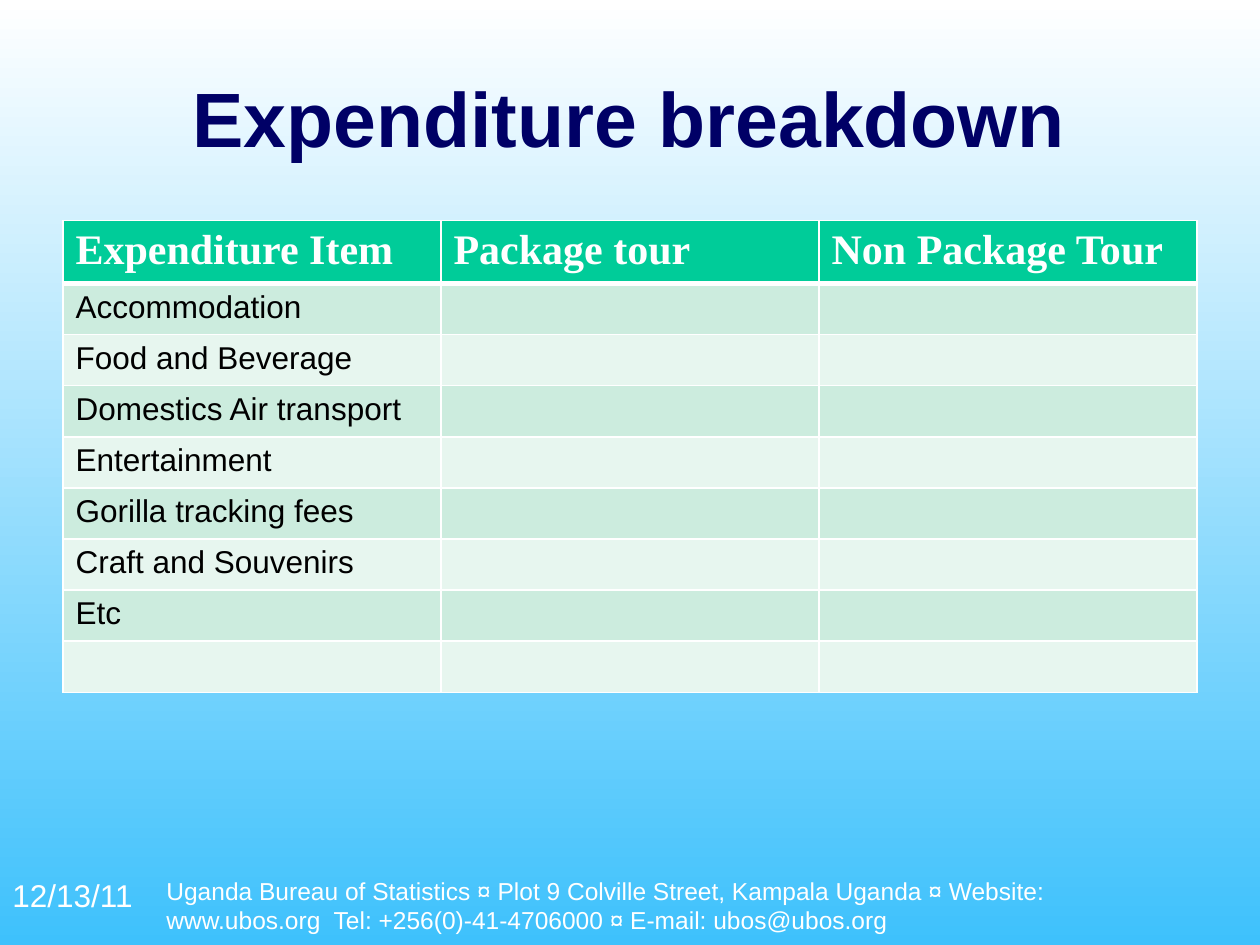
"""Build the expenditure breakdown slide with its table and footer."""
from lxml import etree
from pptx import Presentation
from pptx.dml.color import RGBColor
from pptx.enum.text import MSO_ANCHOR, MSO_AUTO_SIZE, PP_ALIGN
from pptx.oxml.ns import qn
from pptx.util import Pt

LEFT, CENTER = PP_ALIGN.LEFT, PP_ALIGN.CENTER
TOP, MIDDLE = MSO_ANCHOR.TOP, MSO_ANCHOR.MIDDLE
NO_AUTOFIT = MSO_AUTO_SIZE.NONE
TITLE_ONLY = 5

COLORS = {
    "white": "FFFFFF",
    "sky": "3EC1FC",
    "navy": "000066",
    "black": "000000",
    "header": "00CC99",
    "band_dark": "CCECDE",
    "band_light": "E7F6EF",
}
HEADINGS = ["Expenditure Item", "Package tour", "Non Package Tour"]
ITEMS = [
    "Accommodation",
    "Food and Beverage",
    "Domestics Air transport",
    "Entertainment",
    "Gorilla tracking fees",
    "Craft and Souvenirs",
    "Etc",
    "",
]
ADDRESS = (
    "Uganda Bureau of Statistics ¤ Plot 9 Colville Street, Kampala Uganda ¤ "
    "Website: www.ubos.org  Tel: +256(0)-41-4706000 ¤ E-mail: ubos@ubos.org"
)


def rgb(name):
    return RGBColor.from_string(COLORS[name])


def write(frame, text, size=18, font="Arial", color="black", bold=False, align=LEFT):
    para = frame.paragraphs[0]
    para.alignment = align
    para.font.size = Pt(size)
    if text:
        span = para.add_run()
        span.text = text
        span.font.size = Pt(size)
        span.font.name = font
        span.font.bold = bold
        span.font.color.rgb = rgb(color)


class SlideBuilder:
    def __init__(self, page):
        self.page = page
        self.border_color = "white"

    def background(self, top, bottom):
        fill = self.page.background.fill
        fill.gradient()
        fill.gradient_angle = 270
        for stop, position, color in zip(fill.gradient_stops, (0, 1), (top, bottom)):
            stop.position = position
            stop.color.rgb = rgb(color)

    def title(self, text, left, top, width, height):
        box = self.page.shapes.title
        box.left, box.top, box.width, box.height = map(Pt, (left, top, width, height))
        box.text_frame.vertical_anchor = MIDDLE
        box.text_frame.auto_size = NO_AUTOFIT
        write(box.text_frame, text, size=44, color="navy", bold=True, align=CENTER)

    def text(self, text, left, top, width, height, **style):
        box = self.page.shapes.add_textbox(*map(Pt, (left, top, width, height)))
        box.text_frame.word_wrap = True
        box.text_frame.vertical_anchor = TOP
        write(box.text_frame, text, **style)

    def borders(self, cell, **widths):
        properties = cell._tc.get_or_add_tcPr()
        for side in "LRTB":
            line = etree.SubElement(properties, qn(f"a:ln{side}"))
            line.set("w", str(Pt(widths.get(side, 1))))
            fill = etree.SubElement(line, qn("a:solidFill"))
            color = etree.SubElement(fill, qn("a:srgbClr"))
            color.set("val", COLORS[self.border_color])

    def cell(self, cell, text, fill, edges, **style):
        self.borders(cell, **edges)
        cell.fill.solid()
        cell.fill.fore_color.rgb = rgb(fill)
        write(cell.text_frame, text, **style)

    def table(self, headings, items, left, top, width, header_height, row_height):
        height = header_height + row_height * len(items)
        frame = self.page.shapes.add_table(
            len(items) + 1, len(headings), *map(Pt, (left, top, width, height))
        )
        grid = frame.table
        for column in grid.columns:
            column.width = Pt(width / len(headings))
        for index, row in enumerate(grid.rows):
            row.height = Pt(row_height if index else header_height)
        for column, heading in enumerate(headings):
            self.cell(grid.cell(0, column), heading, "header", {"B": 3},
                      size=24, font="Times New Roman", color="white", bold=True)
        for index, item in enumerate(items, start=1):
            band = "band_dark" if index % 2 else "band_light"
            edges = {"T": 3} if index == 1 else {}
            for column in range(len(headings)):
                self.cell(grid.cell(index, column), "" if column else item, band, edges)


def main():
    deck = Presentation()
    deck.slide_width, deck.slide_height = Pt(720), Pt(540)
    page = deck.slides.add_slide(deck.slide_layouts[TITLE_ONLY])
    builder = SlideBuilder(page)
    builder.background("white", "sky")
    builder.title("Expenditure breakdown", 36, 10, 647.5, 113)
    builder.text("12/13/11", 0, 497, 88, 43, color="white")
    builder.text(ADDRESS, 88, 497, 561, 43, size=14, color="white")
    builder.table(HEADINGS, ITEMS, 36, 126, 648, 33.75, 29.2)
    deck.save("out.pptx")


if __name__ == "__main__":
    main()
